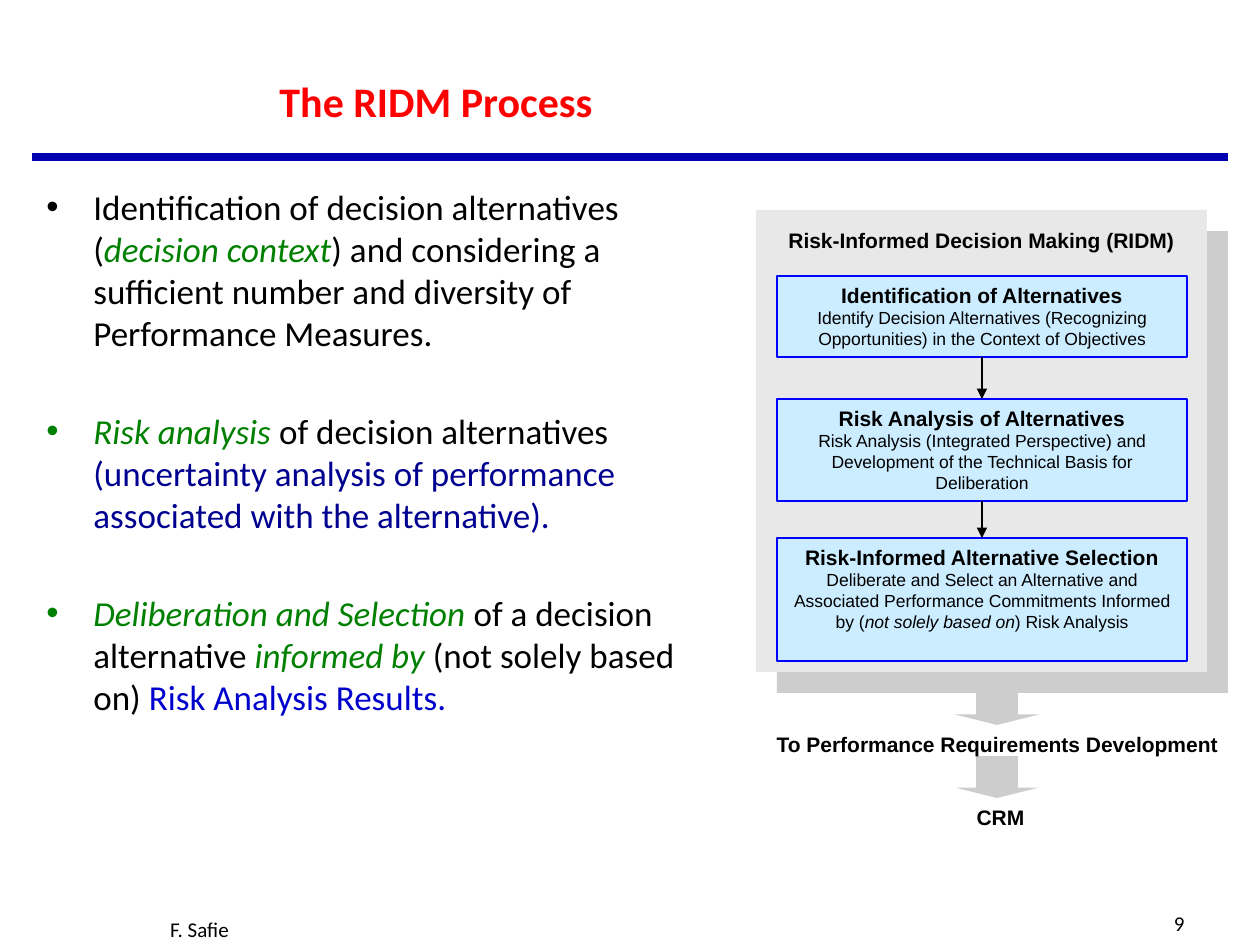
"""Builds the slide on the RIDM process."""
from lxml import etree
from pptx import Presentation
from pptx.dml.color import RGBColor
from pptx.enum.shapes import MSO_CONNECTOR, MSO_SHAPE
from pptx.enum.text import MSO_ANCHOR, PP_ALIGN
from pptx.oxml.ns import qn
from pptx.util import Emu, Pt

CENTER, LEFT, RIGHT = PP_ALIGN.CENTER, PP_ALIGN.LEFT, PP_ALIGN.RIGHT
MIDDLE, TOP = MSO_ANCHOR.MIDDLE, MSO_ANCHOR.TOP
RECT, DOWN_ARROW = MSO_SHAPE.RECTANGLE, MSO_SHAPE.DOWN_ARROW
STRAIGHT = MSO_CONNECTOR.STRAIGHT
BOTTOM_SITE, TOP_SITE = 2, 0

COLORS = {
    "black": "000000", "red": "FF0000", "green": "008000", "navy": "000090",
    "blue": "0000CC", "rule": "0000B0", "shadow": "CDCDCD",
    "panel": "E8E8E8", "step": "CCECFF", "border": "0000FF",
}

BULLETS = [
    [("Identification of decision alternatives (", "black", False),
     ("decision context", "green", True),
     (") and considering a sufficient number and diversity of Performance Measures.", "black", False)],
    [("Risk analysis ", "green", True),
     ("of decision alternatives ", "black", False),
     ("(uncertainty analysis of performance associated with the alternative).", "navy", False)],
    [("Deliberation and Selection ", "green", True),
     ("of a decision alternative ", "black", False),
     ("informed by ", "green", True),
     ("(not solely based on) ", "black", False),
     ("Risk Analysis Results.", "blue", False)],
]

STEPS = [
    (276, 81, "Identification of Alternatives",
     [("Identify Decision Alternatives (Recognizing Opportunities) in the Context of Objectives", "black", False)]),
    (399, 102, "Risk Analysis of Alternatives",
     [("Risk Analysis (Integrated Perspective) and Development of the Technical Basis for Deliberation",
       "black", False)]),
    (538, 123, "Risk-Informed Alternative Selection",
     [("Deliberate and Select an Alternative and Associated Performance Commitments Informed by (",
       "black", False),
      ("not solely based on", "black", True),
      (") Risk Analysis", "black", False)]),
]

LABELS = [
    ("The RIDM Process", (0, 32, 872, 137), "Calibri", 24, True, "red", CENTER, MIDDLE),
    ("F. Safie", (0, 903, 399, 53), "Calibri", 12, False, "black", CENTER, MIDDLE),
    ("9", (903, 892, 294, 63), "Calibri", 12, False, "black", RIGHT, MIDDLE),
    ("Risk-Informed Decision Making (RIDM)", (756, 221, 451, 38), "Arial", 12, True, "black", CENTER, TOP),
    ("To Performance Requirements Development", (756, 725, 483, 38), "Arial", 12, True, "black", CENTER, TOP),
    ("CRM", (829, 798, 343, 38), "Arial", 12, True, "black", CENTER, TOP),
]

BLOCKS = [
    (RECT, (777, 231, 451, 462), "shadow"),
    (RECT, (756, 210, 451, 462), "panel"),
    (DOWN_ARROW, (955, 683, 84, 42), "shadow"),
    (DOWN_ARROW, (955, 756, 84, 42), "shadow"),
]
STEP_LEFT, STEP_WIDTH = 777, 410
PX_PER_INCH = 126


def px(value):
    return Emu(round(value * 914400 / PX_PER_INCH))


def rgb(name):
    return RGBColor.from_string(COLORS[name])


def style(paragraph, font, size, bold, align, color="black"):
    paragraph.alignment = align
    paragraph.font.name = font
    paragraph.font.size = Pt(size)
    paragraph.font.bold = bold
    paragraph.font.color.rgb = rgb(color)


def add_runs(paragraph, runs):
    for text, color, italic in runs:
        run = paragraph.add_run()
        run.text = text
        run.font.italic = italic
        run.font.color.rgb = rgb(color)


def add_frame(shapes, box, anchor):
    frame = shapes.add_textbox(*map(px, box)).text_frame
    frame.word_wrap = True
    frame.vertical_anchor = anchor
    return frame


def add_block(shapes, kind, box, fill):
    block = shapes.add_shape(kind, *map(px, box))
    block.shadow.inherit = False
    block.fill.solid()
    block.fill.fore_color.rgb = rgb(fill)
    block.line.fill.background()
    if kind == DOWN_ARROW:
        block.adjustments[0], block.adjustments[1] = 0.5, 0.25
    return block


def add_step(shapes, top, height, heading, detail):
    step = add_block(shapes, RECT, (STEP_LEFT, top, STEP_WIDTH, height), "step")
    step.line.color.rgb = rgb("border")
    step.line.width = Pt(0.75)
    frame = step.text_frame
    frame.word_wrap = True
    frame.vertical_anchor = TOP
    title, body = frame.paragraphs[0], frame.add_paragraph()
    title.text = heading
    style(title, "Arial", 12, True, CENTER)
    add_runs(body, detail)
    style(body, "Arial", 10, False, CENTER)
    return step


def add_line(shapes, start, end, color, width):
    line = shapes.add_connector(STRAIGHT, *map(px, start + end))
    line.line.color.rgb = rgb(color)
    line.line.width = Pt(width)
    etree.SubElement(line._element.spPr, qn("a:effectLst"))
    return line


def add_bullet(paragraph, color):
    properties = paragraph._p.get_or_add_pPr()
    properties.set("marL", str(px(81)))
    properties.set("indent", str(px(-47)))
    bullet_color = etree.SubElement(properties, qn("a:buClr"))
    etree.SubElement(bullet_color, qn("a:srgbClr"), val=COLORS[color])
    etree.SubElement(properties, qn("a:buFont"), typeface="Arial")
    etree.SubElement(properties, qn("a:buChar"), char="•")


def main():
    deck = Presentation()
    deck.slide_width, deck.slide_height = px(1260), px(945)
    shapes = deck.slides.add_slide(deck.slide_layouts[6]).shapes

    add_line(shapes, (32, 157), (1228, 157), "rule", 4.5)
    for block in BLOCKS:
        add_block(shapes, *block)

    for text, box, font, size, bold, color, align, anchor in LABELS:
        label = add_frame(shapes, box, anchor).paragraphs[0]
        label.text = text
        style(label, font, size, bold, align, color)

    body = add_frame(shapes, (0, 179, 703, 714), TOP)
    for index, runs in enumerate(BULLETS):
        bullet = body.add_paragraph() if index else body.paragraphs[0]
        add_bullet(bullet, runs[0][1])
        if index:
            bullet.space_before = Pt(32)
        add_runs(bullet, runs)
        style(bullet, "Calibri", 20, False, LEFT)

    steps = [add_step(shapes, *step) for step in STEPS]
    middle = STEP_LEFT + STEP_WIDTH // 2
    for upper, lower, (top, height, *_), (next_top, *_) in zip(steps, steps[1:], STEPS, STEPS[1:]):
        arrow = add_line(shapes, (middle, top + height), (middle, next_top), "black", 1)
        arrow.begin_connect(upper, BOTTOM_SITE)
        arrow.end_connect(lower, TOP_SITE)
        etree.SubElement(arrow.line._get_or_add_ln(), qn("a:tailEnd"), type="triangle")

    deck.save("out.pptx")


if __name__ == "__main__":
    main()
